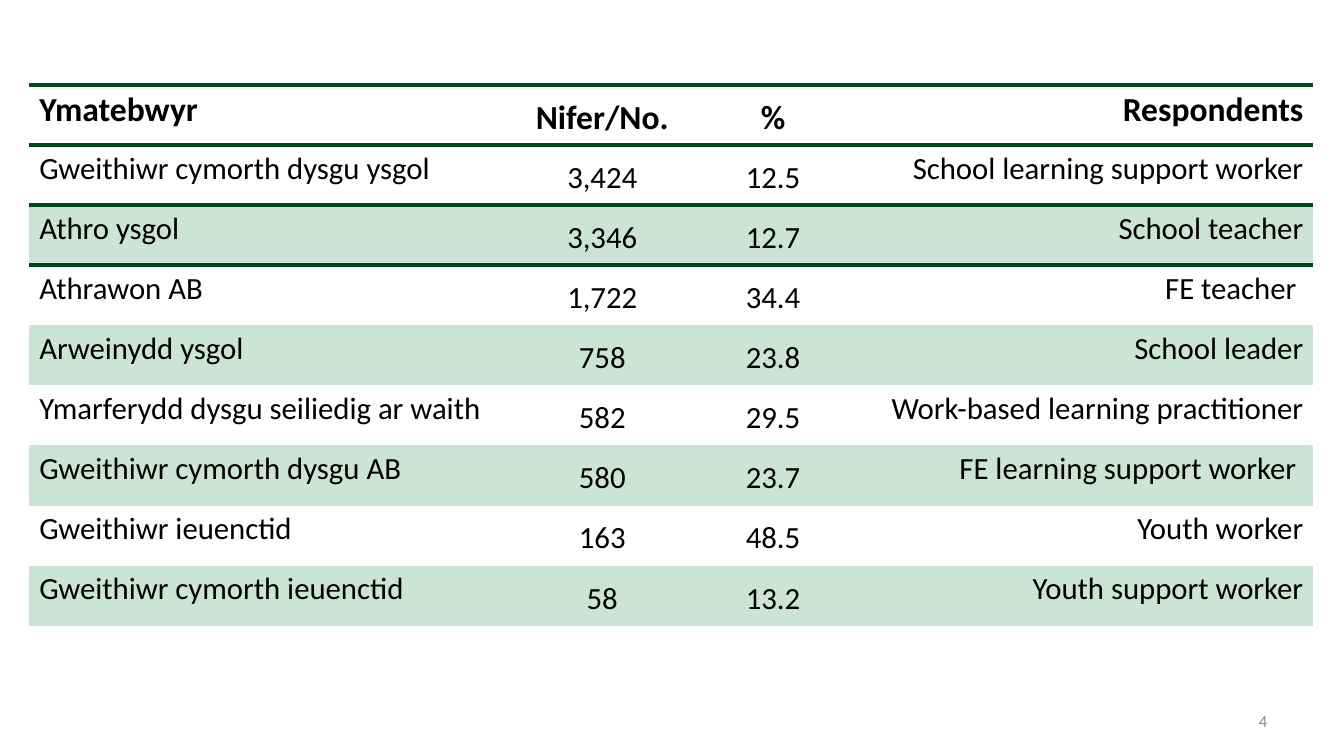
import pptx
import pptx.dml.color
import pptx.enum.text
import pptx.oxml
import pptx.oxml.ns
import pptx.util

Pt = pptx.util.Pt
ALIGN = pptx.enum.text.PP_ALIGN
MIDDLE = pptx.enum.text.MSO_ANCHOR.MIDDLE

FONT = "Calibri"
DARK_GREEN = "00491F"
PALE_GREEN = "CCE4D6"
PLAIN_TABLE_STYLE = "{2D5ABB26-0587-4C30-8999-92F81FD0307C}"

COLUMN_WIDTHS = [341.3, 136, 108, 332]
ROW_HEIGHT = 42.96
ROWS = [
    ("Ymatebwyr", "Nifer/No.", "%", "Respondents"),
    ("Gweithiwr cymorth dysgu ysgol", "3,424", "12.5", "School learning support worker"),
    ("Athro ysgol", "3,346", "12.7", "School teacher"),
    ("Athrawon AB", "1,722", "34.4", "FE teacher "),
    ("Arweinydd ysgol", "758", "23.8", "School leader"),
    ("Ymarferydd dysgu seiliedig ar waith", "582", "29.5", "Work-based learning practitioner"),
    ("Gweithiwr cymorth dysgu AB", "580", "23.7", "FE learning support worker "),
    ("Gweithiwr ieuenctid", "163", "48.5", "Youth worker"),
    ("Gweithiwr cymorth ieuenctid", "58", "13.2", "Youth support worker"),
]


def rgb(color):
    return pptx.dml.color.RGBColor.from_string(color)


def write(frame, text, size, color="000000", bold=False, align=ALIGN.LEFT, spacing=None):
    para = frame.paragraphs[0]
    para.alignment = align
    para.line_spacing = spacing
    span = para.add_run()
    span.text = text
    span.font.name = FONT
    span.font.size = Pt(size)
    span.font.bold = bold
    span.font.color.rgb = rgb(color)


def add_border(cell, side, color, width):
    """Draw one cell edge; side is "T" or "B", and T must come before B."""
    cell._tc.get_or_add_tcPr().append(pptx.oxml.parse_xml(
        f'<a:ln{side} {pptx.oxml.ns.nsdecls("a")} w="{Pt(width)}">'
        f'<a:solidFill><a:srgbClr val="{color}"/></a:solidFill></a:ln{side}>'))


def format_cell(cell, row, column):
    """Apply the borders and banding of a row and the margins of a column."""
    if row <= 2:
        add_border(cell, "T", DARK_GREEN, 3)
    if row <= 1:
        add_border(cell, "B", DARK_GREEN, 3)
    if row and row % 2 == 0:
        cell.fill.solid()
        cell.fill.fore_color.rgb = rgb(PALE_GREEN)
    else:
        cell.fill.background()
    if column in (1, 2):
        cell.vertical_anchor = MIDDLE
        cell.margin_left = cell.margin_right = Pt(5)
        cell.margin_top = cell.margin_bottom = Pt(0)


def add_respondent_table(page, left, top):
    frame = page.shapes.add_table(
        len(ROWS), len(COLUMN_WIDTHS), Pt(left), Pt(top),
        Pt(sum(COLUMN_WIDTHS)), Pt(ROW_HEIGHT * len(ROWS)))
    table = frame.table
    table._tbl.tblPr.find(pptx.oxml.ns.qn("a:tableStyleId")).text = PLAIN_TABLE_STYLE
    for column, width in zip(table.columns, COLUMN_WIDTHS):
        column.width = Pt(width)
    alignments = [ALIGN.LEFT, ALIGN.CENTER, ALIGN.CENTER, ALIGN.RIGHT]
    for row, texts in enumerate(ROWS):
        table.rows[row].height = Pt(ROW_HEIGHT)
        for column, text in enumerate(texts):
            cell = table.cell(row, column)
            format_cell(cell, row, column)
            write(cell.text_frame, text, size=22 if row else 24, bold=row == 0,
                  align=alignments[column], spacing=1.15 if column in (1, 2) else None)


def add_page_number(page, number):
    box = page.shapes.add_textbox(Pt(688.3), Pt(500.4), Pt(224), Pt(28.8))
    box.text_frame.word_wrap = True
    box.text_frame.vertical_anchor = MIDDLE
    write(box.text_frame, number, size=12, color="8C8C8C", align=ALIGN.RIGHT)


def main():
    deck = pptx.Presentation()
    deck.slide_width, deck.slide_height = Pt(960), Pt(540)
    page = deck.slides.add_slide(deck.slide_layouts[6])
    add_respondent_table(page, left=20.9, top=60.5)
    add_page_number(page, "4")
    deck.save("out.pptx")


if __name__ == "__main__":
    main()
